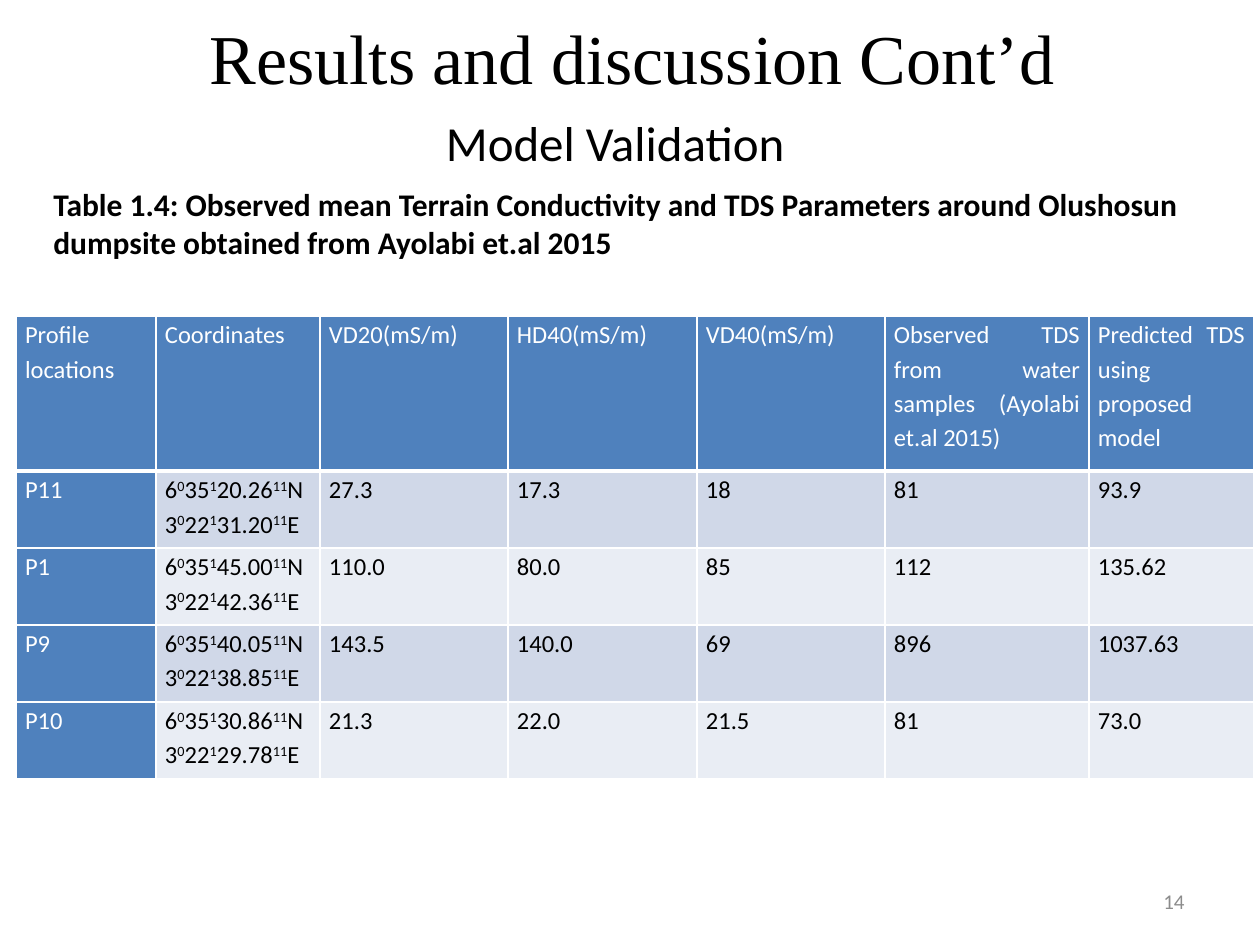
from lxml import etree
from pptx import Presentation
from pptx import util as u
from pptx.dml.color import RGBColor
from pptx.enum import text
from pptx.oxml import ns

PX = u.Inches(1) / 126
ALIGN = text.PP_ALIGN
THEME = {
    "sans": "Calibri", "serif": "Times New Roman",
    "ink": "000000", "pale": "FFFFFF", "grey": "8C8C8C",
    "head": "4F81BD", "bands": ("D0D8E8", "E9EDF4"),
    "title": 40, "sub": 28, "note": 18, "cell": 14, "page": 12,
}
COLS = (140, 164, 188, 189, 188, 204, 165)
ROWS = (155, 77, 77, 77, 77)
HEADS = (
    "Profile locations", "Coordinates", "VD20(mS/m)", "HD40(mS/m)", "VD40(mS/m)",
    "Observed TDS from water samples (Ayolabi et.al 2015)",
    "Predicted TDS using proposed model",
)
SITES = (
    ("P11", "20.26", "31.20", "27.3", "17.3", "18", "81", "93.9"),
    ("P1", "45.00", "42.36", "110.0", "80.0", "85", "112", "135.62"),
    ("P9", "40.05", "38.85", "143.5", "140.0", "69", "896", "1037.63"),
    ("P10", "30.86", "29.78", "21.3", "22.0", "21.5", "81", "73.0"),
)


def px(n):
    return u.Emu(round(n * PX))


def apply(obj, vals):
    for key, val in vals.items():
        setattr(obj, key, val)


def write(para, words, size, color="ink", face="sans", bold=False, **form):
    apply(para, form)
    for i, part in enumerate(words.split("^")):
        run = para.add_run()
        run.text = part
        apply(run.font, {"size": u.Pt(size), "name": THEME[face], "bold": bold})
        run.font.color.rgb = RGBColor.from_string(THEME[color])
        if i % 2:
            run._r.get_or_add_rPr().set("baseline", "30000")


def label(slide, box, words, size, frame=None, **form):
    body = slide.shapes.add_textbox(*map(px, box)).text_frame
    apply(body, {"word_wrap": True, **(frame or {})})
    write(body.paragraphs[0], words, THEME[size], **form)


def edge(cell, base):
    props = cell._tc.get_or_add_tcPr()
    for side, width in (("L", 1), ("R", 1), ("T", 1), ("B", base)):
        line = etree.SubElement(props, ns.qn("a:ln" + side), w=str(u.Pt(width)))
        fill = etree.SubElement(line, ns.qn("a:solidFill"))
        etree.SubElement(fill, ns.qn("a:srgbClr"), val=THEME["pale"])


def place(north, east):
    return f"6^0^35^1^{north}^11^N\n3^0^22^1^{east}^11^E"


def grid(slide, box):
    data = [HEADS] + [(name, place(n, e), *vals) for name, n, e, *vals in SITES]
    table = slide.shapes.add_table(len(ROWS), len(COLS), *map(px, box)).table
    for col, wide in zip(table.columns, COLS):
        col.width = px(wide)
    for r, (row, high) in enumerate(zip(data, ROWS)):
        table.rows[r].height = px(high)
        for c, words in enumerate(row):
            cell = table.cell(r, c)
            head = r == 0 or c == 0
            edge(cell, 3 if r == 0 else 1)
            cell.fill.solid()
            shade = THEME["head"] if head else THEME["bands"][(r - 1) % 2]
            cell.fill.fore_color.rgb = RGBColor.from_string(shade)
            apply(cell, {"margin_left": px(9), "margin_right": px(9),
                         "margin_top": 0, "margin_bottom": 0})
            body = cell.text_frame
            for i, line in enumerate(words.split("\n")):
                para = body.add_paragraph() if i else body.paragraphs[0]
                write(para, line, THEME["cell"], "pale" if head else "ink",
                      alignment=ALIGN.JUSTIFY, line_spacing=1.15)


def heads(slide, box):
    x, y, w, h = box
    label(slide, (x + 24, y, w - 93, 84), "Results and discussion Cont’d", "title",
          {"margin_top": px(15)}, face="serif", alignment=ALIGN.CENTER)
    label(slide, (x + 337, y + 106, 451, 72), "Model Validation", "sub",
          {"margin_left": px(68)})
    label(slide, (x, y + 179, w - 40, 89),
          "Table 1.4: Observed mean Terrain Conductivity and TDS Parameters "
          "around Olushosun dumpsite obtained from Ayolabi et.al 2015",
          "note", bold=True)


def foot(slide, box):
    label(slide, box, "14", "page", {"vertical_anchor": text.MSO_ANCHOR.MIDDLE},
          color="grey", alignment=ALIGN.RIGHT)


def main():
    deck = Presentation()
    apply(deck, {"slide_width": px(1260), "slide_height": px(945)})
    slide = deck.slides.add_slide(deck.slide_layouts[6])
    heads(slide, (41, 0, 1227, 268))
    grid(slide, (16, 316, sum(COLS), sum(ROWS)))
    foot(slide, (903, 876, 294, 50))
    deck.save("out.pptx")


if __name__ == "__main__":
    main()
